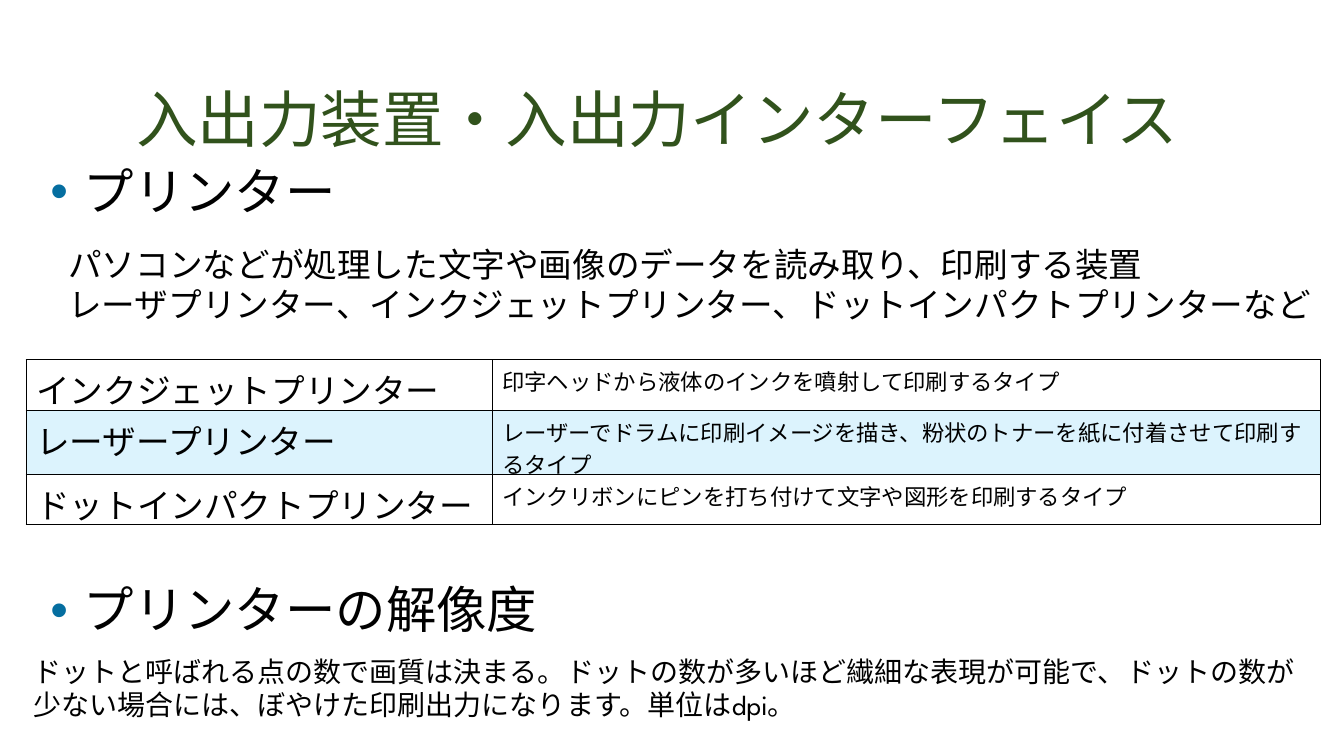
import pptx
import pptx.util
import pptx.dml.color
import pptx.enum.text
import pptx.oxml
import pptx.oxml.ns

COLORS = {"title": "31521C", "text": "000000", "bullet": "056EA0",
          "band": "51C3F9", "border": "000000"}
CJK_FONT = "Noto Sans CJK JP"
BODY_FONT = "League Spartan"
INCH = pptx.util.Inches
PRINTER_TYPES = [
    ("インクジェットプリンター", "印字ヘッドから液体のインクを噴射して印刷するタイプ"),
    ("レーザープリンター", "レーザーでドラムに印刷イメージを描き、粉状のトナーを紙に付着させて印刷するタイプ"),
    ("ドットインパクトプリンター", "インクリボンにピンを打ち付けて文字や図形を印刷するタイプ"),
]


def color(name):
    return pptx.dml.color.RGBColor.from_string(COLORS[name])


def drawing_element(xml):
    return pptx.oxml.parse_xml(xml.replace(" ", f' {pptx.oxml.ns.nsdecls("a")} ', 1))


def style_paragraph(para, size, font, color_name="text"):
    para.font.size = pptx.util.Pt(size)
    para.font.name = font
    para.font.color.rgb = color(color_name)


def add_text(page, box, lines, size, font, color_name="text", insets=(0.1, 0.05),
             anchor=pptx.enum.text.MSO_ANCHOR.TOP, spacing=None):
    frame = page.shapes.add_textbox(*map(INCH, box)).text_frame
    frame.word_wrap = True
    frame.vertical_anchor = anchor
    frame.margin_left = frame.margin_right = INCH(insets[0])
    frame.margin_top = frame.margin_bottom = INCH(insets[1])
    frame.text = "\n".join(lines)
    for para in frame.paragraphs:
        style_paragraph(para, size, font, color_name)
        para.line_spacing = spacing
    return frame


def add_title(page, box, text):
    add_text(page, box, [text], 44, CJK_FONT, "title", (0.13, 0.07),
             pptx.enum.text.MSO_ANCHOR.BOTTOM, 0.85)


def add_heading(page, box, text):
    frame = add_text(page, box, [text], 36, CJK_FONT, insets=(0.13, 0.07), spacing=0.95)
    properties = frame.paragraphs[0]._p.get_or_add_pPr()
    properties.set("marL", str(INCH(0.33)))
    properties.set("indent", str(-INCH(0.33)))
    bullet = (f'<a:buClr ><a:srgbClr val="{COLORS["bullet"]}"/></a:buClr>',
              '<a:buFont typeface="Arial"/>', '<a:buChar char="•"/>')
    for xml in bullet:
        properties.append(drawing_element(xml))


def add_description(page, box, lines):
    frame = add_text(page, box, lines, 24, BODY_FONT)
    for para in frame.paragraphs:
        para._p.get_or_add_pPr().set("marL", str(INCH(0.33)))


def style_cell(cell, text, size, banded):
    cell.text = text
    style_paragraph(cell.text_frame.paragraphs[0], size, BODY_FONT)
    if banded:
        cell.fill.solid()
        cell.fill.fore_color.rgb = color("band")
        tint = cell._tc.tcPr.find(".//" + pptx.oxml.ns.qn("a:srgbClr"))
        tint.append(drawing_element('<a:alpha val="20000"/>'))
    else:
        cell.fill.background()
    for index, side in enumerate(("lnL", "lnR", "lnT", "lnB")):
        cell._tc.tcPr.insert(index, drawing_element(
            f'<a:{side} w="12700"><a:solidFill><a:srgbClr val="{COLORS["border"]}"/>'
            f'</a:solidFill></a:{side}>'))


def add_printer_table(page, box):
    table = page.shapes.add_table(len(PRINTER_TYPES), 2, *map(INCH, box)).table
    table.first_row = False
    table.horz_banding = False
    for column, share in zip(table.columns, (0.36, 0.64)):
        column.width = INCH(box[2] * share)
    for row, share in zip(table.rows, (0.305, 0.39, 0.305)):
        row.height = INCH(box[3] * share)
    for row_index, texts in enumerate(PRINTER_TYPES):
        for column_index, (text, size) in enumerate(zip(texts, (24, 16))):
            style_cell(table.cell(row_index, column_index), text, size, row_index % 2 == 1)


def build_printer_slide(deck):
    page = deck.slides.add_slide(deck.slide_layouts[6])
    add_title(page, (1.22, 0.08, 11.11, 1.53), "入出力装置・入出力インターフェイス")
    add_heading(page, (0.37, 1.56, 12.6, 0.8), "プリンター")
    add_description(page, (0.25, 2.37, 12.88, 0.91), [
        "パソコンなどが処理した文字や画像のデータを読み取り、印刷する装置",
        "レーザプリンター、インクジェットプリンター、ドットインパクトプリンターなど"])
    add_printer_table(page, (0.26, 3.57, 12.84, 1.63))
    add_heading(page, (0.37, 5.71, 12.6, 0.8), "プリンターの解像度")
    add_text(page, (0.23, 6.44, 12.84, 0.77), [
        "ドットと呼ばれる点の数で画質は決まる。ドットの数が多いほど繊細な表現が可能で、"
        "ドットの数が少ない場合には、ぼやけた印刷出力になります。単位はdpi。"], 20, BODY_FONT)


def main():
    deck = pptx.Presentation()
    deck.slide_width = INCH(13.33)
    deck.slide_height = INCH(7.5)
    build_printer_slide(deck)
    deck.save("out.pptx")


if __name__ == "__main__":
    main()
